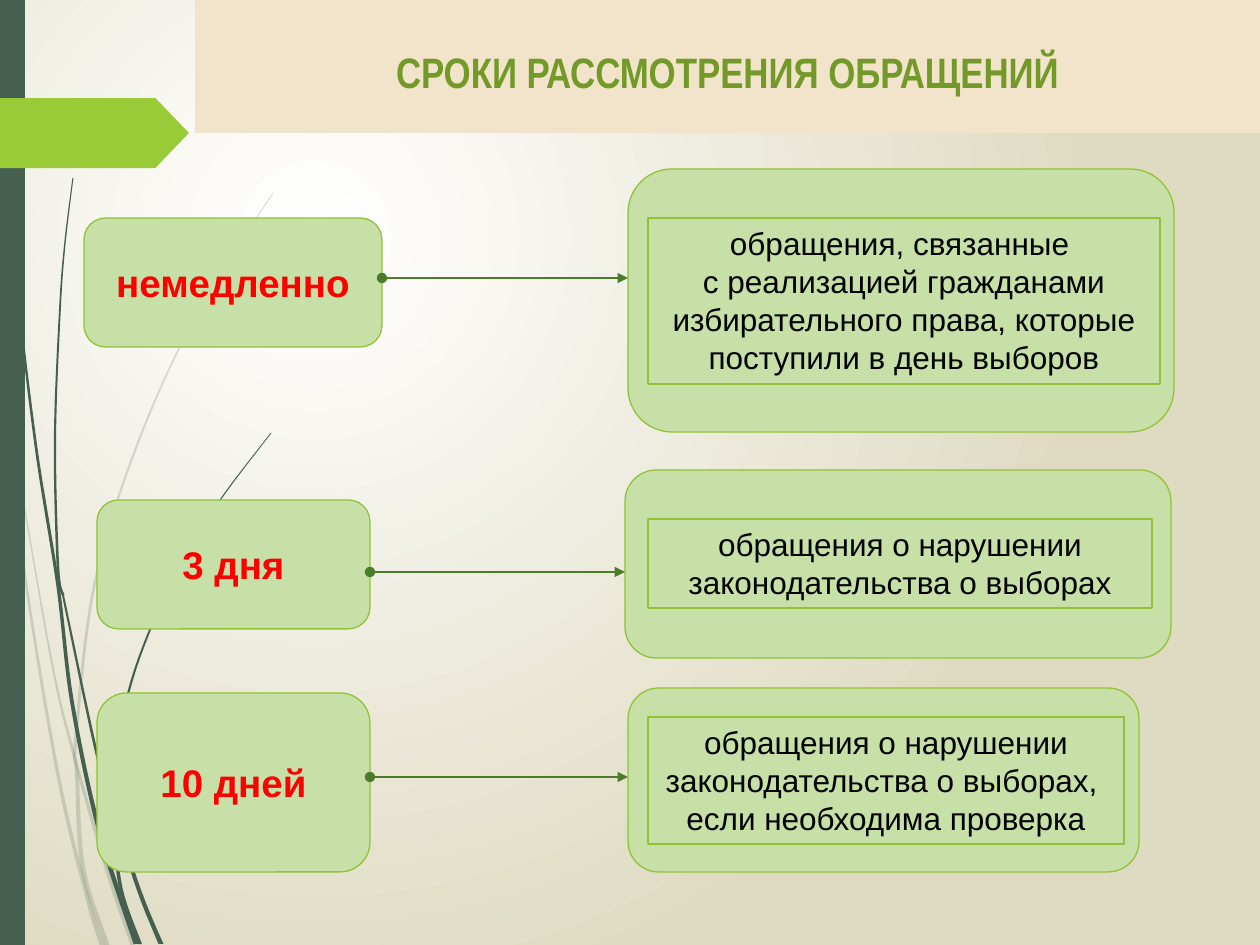
"""Build the slide on time limits for considering appeals."""
from lxml import etree
from pptx import Presentation
from pptx import util as u
from pptx.dml.color import RGBColor
from pptx.enum import shapes, text
from pptx.oxml.ns import qn

SCALE = 914400 / 126
COLORS = {
    "white": "FFFFFF", "sand": "DFDBC2", "dark": "455F51", "lime": "99CB38",
    "banner": "F2E4CA", "title": "739A28", "panel": "C6E0A7", "border": "92C235",
    "arrow": "4A7C29", "label": "FF0000", "body": "000000",
}
WISPS = [
    (20, 1, 5, [(0, 366), (14, 474), (27, 590), (59, 780), (88, 900), (102, 945)]),
    (20, 1, 5, [(13, 440), (51, 658), (74, 755), (108, 873), (133, 945)]),
    (20, 1, 5, [(273, 193), (200, 308), (139, 440), (95, 582), (76, 736),
                (77, 775), (83, 868), (107, 945)]),
    (100, 1, 5, [(4, 0), (7, 138), (18, 293), (36, 447), (58, 586), (72, 702),
                 (99, 830), (136, 944)]),
    (100, 2, 5, [(63, 595), (95, 746), (112, 806), (139, 890), (161, 944)]),
    (100, 1, 4, [(271, 433), (212, 512), (164, 598), (128, 694), (113, 796),
                 (114, 826), (121, 889), (140, 944)]),
    (100, 1, 3, [(73, 178), (65, 243), (60, 309), (55, 440), (58, 567), (63, 595)]),
]
ROWS = [
    ("немедленно", (84, 218, 298, 129), (628, 169, 546, 263), (648, 218, 512, 166), 278,
     ["обращения, связанные ",
      "с реализацией гражданами избирательного права, которые поступили в день выборов"]),
    ("3 дня", (97, 500, 273, 129), (625, 470, 546, 188), (648, 519, 504, 89), 572,
     ["обращения о нарушении", "законодательства о выборах"]),
    ("10 дней", (97, 693, 273, 179), (628, 688, 511, 184), (648, 717, 476, 127), 777,
     ["обращения о нарушении", "законодательства о выборах, ", "если необходима проверка"]),
]


def px(length):
    """Turn pixels into EMU."""
    return u.Emu(round(length * SCALE))


def color(name):
    """Return a named colour."""
    return RGBColor.from_string(COLORS[name])


def smooth(points, steps=8):
    """Return a Catmull-Rom curve through the points."""
    padded = [points[0], *points, points[-1]]
    curve = []
    for a, b, c, d in zip(padded, padded[1:], padded[2:], padded[3:]):
        for step in range(steps):
            t = step / steps
            curve.append(tuple(
                q + t * (r - p) / 2 + t**2 * (2 * p - 5 * q + 4 * r - s) / 2
                + t**3 * (3 * q - p - 3 * r + s) / 2
                for p, q, r, s in zip(a, b, c, d)))
    return curve + [points[-1]]


class Deck:
    """Hold the style and the current slide."""

    def __init__(self):
        """Start a presentation with one title slide."""
        self.presentation = Presentation()
        self.presentation.slide_width = px(1260)
        self.presentation.slide_height = px(945)
        self.slide = self.presentation.slides.add_slide(self.presentation.slide_layouts[5])
        self.shapes = self.slide.shapes

    def background(self, inner, outer):
        """Fill the background with a circular gradient."""
        fill = self.slide.background.fill
        fill.gradient()
        for stop, name, position in zip(fill.gradient_stops, (inner, outer), (0, 1)):
            stop.color.rgb = color(name)
            stop.position = position
        linear = self.slide.element.xpath(".//a:lin")[0]
        circle = etree.Element(qn("a:path"), path="circle")
        etree.SubElement(circle, qn("a:fillToRect"), l="50000", t="50000",
                         r="100000", b="100000")
        linear.getparent().replace(linear, circle)

    def paint(self, shape, fill, border=None):
        """Set the fill and the border of a shape."""
        shape.fill.solid()
        shape.fill.fore_color.rgb = color(fill)
        if border:
            shape.line.color.rgb = color(border)
            shape.line.width = u.Pt(0.75)
        else:
            shape.line.fill.background()

    def add_lines(self, frame, lines, size, name, font="Arial", bold=False):
        """Put centred lines into one paragraph."""
        paragraph = frame.paragraphs[0]
        paragraph.alignment = text.PP_ALIGN.CENTER
        for index, line in enumerate(lines):
            if index:
                paragraph.add_line_break()
            run = paragraph.add_run()
            run.text = line
            run.font.name = font
            run.font.size = u.Pt(size)
            run.font.bold = bold
            run.font.color.rgb = color(name)

    def shape(self, kind, box, fill, border=None):
        """Add a preset shape."""
        shape = self.shapes.add_shape(kind, *map(px, box))
        shape.shadow.inherit = False
        self.paint(shape, fill, border)
        return shape

    def panel(self, box):
        """Add a rounded panel."""
        return self.shape(shapes.MSO_SHAPE.ROUNDED_RECTANGLE, box, "panel", "border")

    def wisp(self, opacity, start, end, points):
        """Add a tapering curved blade."""
        curve = smooth(points)
        halves = [(start + (end - start) * i / (len(curve) - 1)) / 2
                  for i in range(len(curve))]
        left = [(px(x - half), px(y)) for (x, y), half in zip(curve, halves)]
        right = [(px(x + half), px(y)) for (x, y), half in zip(curve, halves)]
        outline = left + right[::-1]
        builder = self.shapes.build_freeform(*outline[0])
        builder.add_line_segments(outline[1:], close=True)
        shape = builder.convert_to_shape()
        shape.shadow.inherit = False
        self.paint(shape, "dark")
        if opacity < 100:
            fill = shape.element.spPr.find(qn("a:solidFill"))
            etree.SubElement(fill[0], qn("a:alpha"), val=str(opacity * 1000))

    def title(self, box, line):
        """Place and fill the title placeholder."""
        shape = self.shapes.title
        shape.left, shape.top, shape.width, shape.height = map(px, box)
        self.paint(shape, "banner")
        frame = shape.text_frame
        frame.vertical_anchor = text.MSO_ANCHOR.MIDDLE
        frame.margin_top, frame.margin_bottom = px(16), px(6)
        self.add_lines(frame, [line], 24.3, "title", "Arial Narrow", True)

    def label(self, box, line):
        """Add a panel with a bold time limit."""
        frame = self.panel(box).text_frame
        frame.word_wrap = False
        frame.vertical_anchor = text.MSO_ANCHOR.MIDDLE
        self.add_lines(frame, [line], 22, "label", bold=True)

    def textbox(self, box, lines):
        """Add a bordered text box."""
        shape = self.shapes.add_textbox(*map(px, box))
        self.paint(shape, "panel", "border")
        shape.text_frame.word_wrap = True
        shape.text_frame.auto_size = text.MSO_AUTO_SIZE.SHAPE_TO_FIT_TEXT
        self.add_lines(shape.text_frame, lines, 18, "body")

    def arrow(self, start, end, y):
        """Add a horizontal arrow with a round tail."""
        connector = self.shapes.add_connector(
            shapes.MSO_CONNECTOR.STRAIGHT, px(start), px(y), px(end), px(y))
        connector.line.color.rgb = color("arrow")
        connector.line.width = u.Pt(1.25)
        properties = connector.element.spPr
        line = properties.find(qn("a:ln"))
        etree.SubElement(line, qn("a:headEnd"), type="oval")
        etree.SubElement(line, qn("a:tailEnd"), type="triangle")
        etree.SubElement(properties, qn("a:effectLst"))


def main():
    """Build and save the slide."""
    deck = Deck()
    deck.background("white", "sand")
    for wisp in WISPS:
        deck.wisp(*wisp)
    deck.shape(shapes.MSO_SHAPE.RECTANGLE, (0, 0, 25, 945), "dark")
    pointer = deck.shape(shapes.MSO_SHAPE.PENTAGON, (0, 98, 189, 70), "lime")
    pointer.adjustments[0] = 0.48
    deck.title((195, 0, 1065, 133), "СРОКИ РАССМОТРЕНИЯ ОБРАЩЕНИЙ")
    for term, label, panel, box, y, lines in ROWS:
        deck.label(label, term)
        deck.panel(panel)
        deck.arrow(label[0] + label[2], panel[0], y)
        deck.textbox(box, lines)
    deck.presentation.save("out.pptx")


if __name__ == "__main__":
    main()
